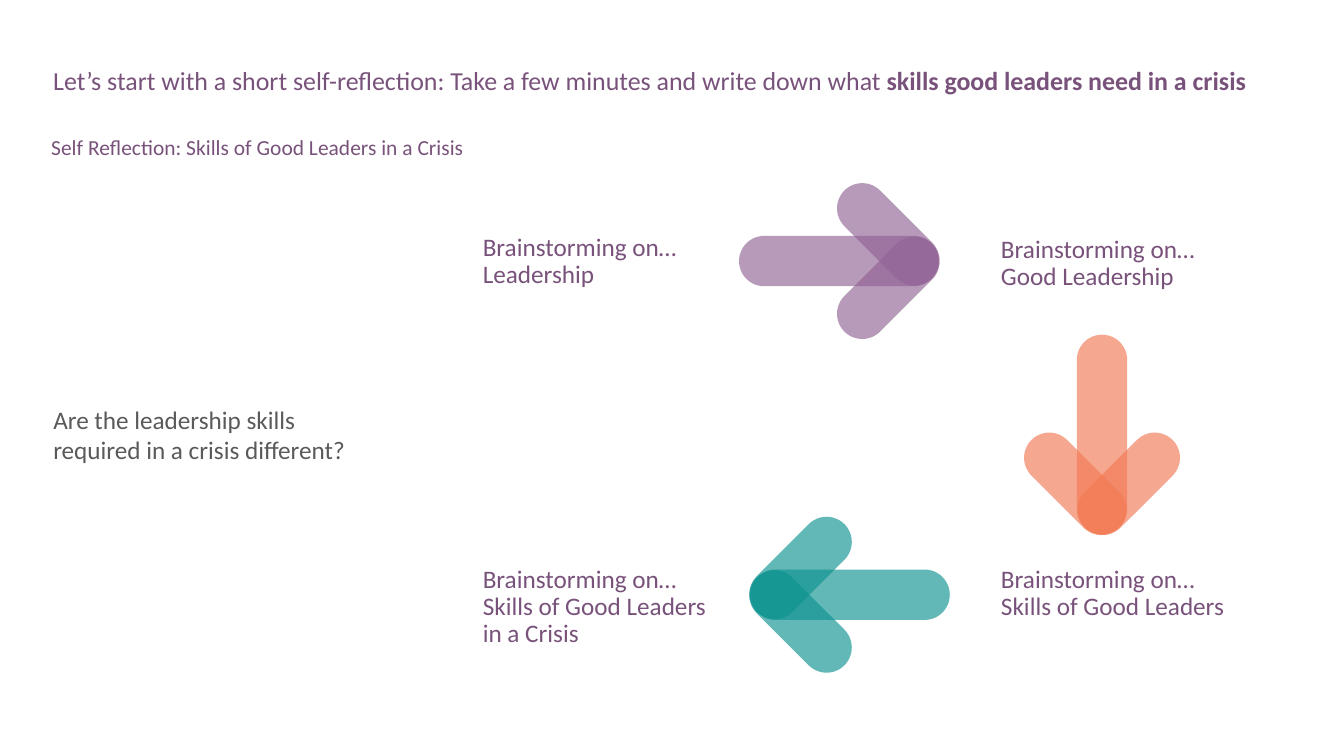
import math

from lxml import etree
from pptx import Presentation
from pptx import util as u
from pptx.dml.color import RGBColor
from pptx.enum import shapes, text
from pptx.oxml.ns import qn

COLORS = {"plum": "79527B", "gray": "595A59",
          "purple": "916395", "orange": "F27954", "teal": "0D9390"}
FONT = "Calibri"
OPACITY = 65

# box (left, top, width, height), size, colour, line spacing, anchor, lines of (words, bold)
TOP, MIDDLE = text.MSO_ANCHOR.TOP, text.MSO_ANCHOR.MIDDLE
HEADINGS = [
    ((0.43, 1.79, 3.49, 5.04), 18, "gray", 1.0, MIDDLE,
     [[("Are the leadership skills required in a crisis different?", False)]]),
    ((0.43, 0.63, 12.54, 0.64), 18.5, "plum", 0.9, TOP,
     [[("Let’s start with a short self-reflection: Take a few minutes and write down what ", False),
       ("skills good leaders need in a crisis", True)]]),
    ((0.41, 1.35, 12.56, 0.28), 15.3, "plum", 0.7, TOP,
     [[("Self Reflection: Skills of Good Leaders in a Crisis", False)]]),
]
STEP_INTRO = "Brainstorming on…"
STEPS = [
    ((4.69, 2.28, 2.87, 1.05), ["Leadership"]),
    ((9.83, 2.3, 3.14, 0.78), ["Good Leadership"]),
    ((9.83, 5.57, 3.14, 0.78), ["Skills of Good Leaders"]),
    ((4.69, 5.57, 3.14, 1.05), ["Skills of Good Leaders", "in a Crisis"]),
]
# shaft centre, direction in degrees clockwise from right, colour
ARROWS = [((8.32, 2.59), 0, "purple"), ((10.93, 4.31), 90, "orange"), ((8.43, 5.9), 180, "teal")]
SHAFT_LENGTH, BARB_LENGTH, BAR_WIDTH = 1.98, 1.23, 0.5
BARB_FORWARD, BARB_SIDE = 0.49, 0.265


def add_text(slide, box, size, color, spacing, anchor, lines):
    frame = slide.shapes.add_textbox(*map(u.Inches, box)).text_frame
    frame.word_wrap = True
    frame.vertical_anchor = anchor
    paragraph = frame.paragraphs[0]
    paragraph.line_spacing = spacing
    for number, line in enumerate(lines):
        if number:
            paragraph.add_line_break()
        for words, bold in line:
            run = paragraph.add_run()
            run.text = words
            for key, value in {"name": FONT, "size": u.Pt(size), "bold": bold}.items():
                setattr(run.font, key, value)
            run.font.color.rgb = RGBColor.from_string(COLORS[color])


def add_bar(slide, center, length, angle, color):
    """Add a translucent rounded bar, turned about its centre."""
    x, y = center
    bar = slide.shapes.add_shape(
        shapes.MSO_SHAPE.ROUNDED_RECTANGLE,
        u.Inches(x - length / 2), u.Inches(y - BAR_WIDTH / 2),
        u.Inches(length), u.Inches(BAR_WIDTH))
    bar.adjustments[0] = 0.5
    bar.rotation = angle
    bar.shadow.inherit = False
    bar.line.fill.background()
    bar.fill.solid()
    bar.fill.fore_color.rgb = RGBColor.from_string(COLORS[color])
    tint = bar.fill._xPr.find(qn("a:solidFill"))[0]
    etree.SubElement(tint, qn("a:alpha"), val=str(OPACITY * 1000))


def add_arrow(slide, center, direction, color):
    add_bar(slide, center, SHAFT_LENGTH, direction, color)
    cos, sin = math.cos(math.radians(direction)), math.sin(math.radians(direction))
    for side in (1, -1):
        across = side * BARB_SIDE
        barb_center = (center[0] + BARB_FORWARD * cos - across * sin,
                       center[1] + BARB_FORWARD * sin + across * cos)
        add_bar(slide, barb_center, BARB_LENGTH, (direction - 45 * side) % 360, color)


def main():
    deck = Presentation()
    deck.slide_width, deck.slide_height = u.Inches(13.33), u.Inches(7.5)
    slide = deck.slides.add_slide(deck.slide_layouts[6])
    for heading in HEADINGS:
        add_text(slide, *heading)
    for arrow in ARROWS:
        add_arrow(slide, *arrow)
    for box, topic in STEPS:
        lines = [[(words, False)] for words in [STEP_INTRO, *topic]]
        add_text(slide, box, 18, "plum", 0.9, TOP, lines)
    deck.save("out.pptx")


if __name__ == "__main__":
    main()
